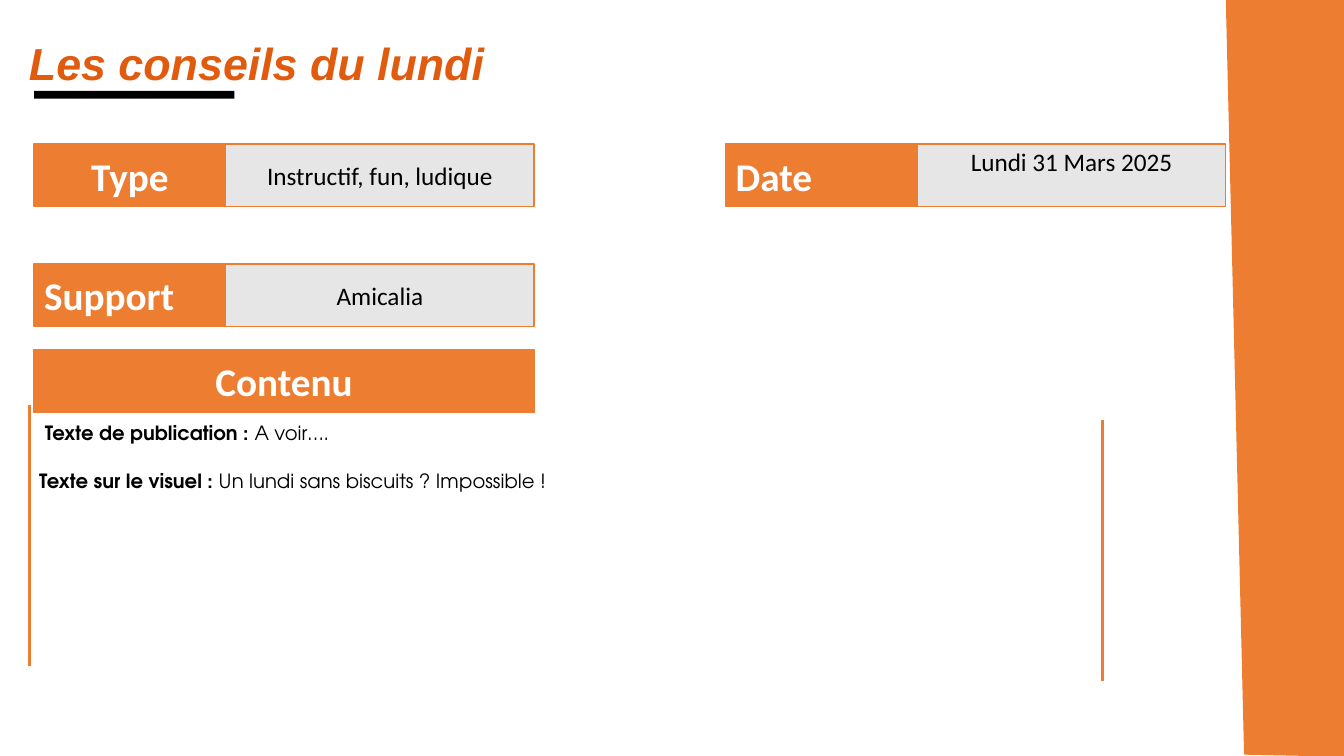
from dataclasses import dataclass

import pptx
import pptx.dml.color
import pptx.enum.shapes
import pptx.enum.text
import pptx.oxml
import pptx.oxml.ns
import pptx.util

Cm, Pt = pptx.util.Cm, pptx.util.Pt
ALIGN = pptx.enum.text.PP_ALIGN
ANCHOR = pptx.enum.text.MSO_ANCHOR


@dataclass(frozen=True)
class Theme:
    orange: str = "ED7D31"
    title_orange: str = "E15B0F"
    grey: str = "E7E6E6"
    black: str = "000000"
    white: str = "FFFFFF"
    card_font: str = "Calibri"
    title_font: str = "Arial"
    content_font: str = "TeX Gyre Adventor"
    title_size: int = 32
    label_size: int = 28
    value_size: int = 18
    content_size: int = 14


THEME = Theme()

# Card grid, in centimetres
LEFT, LABEL_WIDTH, VALUE_WIDTH, CARD_HEIGHT = 0.86, 4.83, 7.77, 1.58


def apply_format(target, values):
    for name, value in values.items():
        setattr(target, name, value)


def rgb(color):
    return pptx.dml.color.RGBColor.from_string(color)


def write(paragraph, text, color, **font):
    run = paragraph.add_run()
    run.text = text
    apply_format(run.font, font)
    run.font.color.rgb = rgb(color)


def paint(shape, fill, line=None):
    shape.shadow.inherit = False
    shape.fill.solid()
    shape.fill.fore_color.rgb = rgb(fill)
    if line:
        shape.line.color.rgb = rgb(line)
        shape.line.width = Pt(1)
    else:
        shape.line.fill.background()


def add_box(slide, left, top, width, height, fill, line=None):
    shape = slide.shapes.add_shape(
        pptx.enum.shapes.MSO_SHAPE.RECTANGLE,
        Cm(left), Cm(top), Cm(width), Cm(height))
    paint(shape, fill, line)
    return shape


def add_label(slide, left, top, text, align=ALIGN.LEFT, width=LABEL_WIDTH):
    shape = add_box(slide, left, top, width, CARD_HEIGHT, THEME.orange, THEME.orange)
    shape.text_frame.vertical_anchor = ANCHOR.MIDDLE
    paragraph = shape.text_frame.paragraphs[0]
    paragraph.alignment = align
    write(paragraph, text, THEME.white, name=THEME.card_font,
          size=Pt(THEME.label_size), bold=True)


def add_value(slide, left, top, text, **frame):
    shape = add_box(slide, left, top, VALUE_WIDTH, CARD_HEIGHT, THEME.grey, THEME.orange)
    apply_format(shape.text_frame, {"vertical_anchor": ANCHOR.MIDDLE, **frame})
    paragraph = shape.text_frame.paragraphs[0]
    paragraph.alignment = ALIGN.CENTER
    write(paragraph, text, THEME.black, name=THEME.card_font, size=Pt(THEME.value_size))


def add_vertical_rule(slide, left, top, height):
    rule = slide.shapes.add_connector(
        pptx.enum.shapes.MSO_CONNECTOR.STRAIGHT,
        Cm(left), Cm(top), Cm(left), Cm(top + height))
    rule.line.color.rgb = rgb(THEME.orange)
    rule.line.width = Pt(2.25)
    properties = rule._element.spPr
    properties.append(pptx.oxml.parse_xml(
        "<a:effectLst %s/>" % pptx.oxml.ns.nsdecls("a")))


def add_text_frame(slide, left, top, width, height, **frame):
    box = slide.shapes.add_textbox(Cm(left), Cm(top), Cm(width), Cm(height))
    apply_format(box.text_frame, {"word_wrap": True, **frame})
    return box.text_frame


def add_side_band(slide):
    corners = [(33.87, 0), (33.87, 19.05), (31.37, 19), (30.91, 0)]
    builder = slide.shapes.build_freeform(Cm(30.91), Cm(0))
    builder.add_line_segments([(Cm(x), Cm(y)) for x, y in corners], close=True)
    paint(builder.convert_to_shape(), THEME.orange, THEME.orange)


def add_title(slide):
    frame = add_text_frame(slide, 0.48, 0.64, 28, 1.32, margin_top=Cm(0.25))
    paragraph = frame.paragraphs[0]
    paragraph.alignment = ALIGN.JUSTIFY
    write(paragraph, "Les conseils du lundi", THEME.title_orange, name=THEME.title_font,
          size=Pt(THEME.title_size), bold=True, italic=True)
    add_box(slide, LEFT, 2.29, 5.05, 0.2, THEME.black)


def add_content(slide):
    frame = add_text_frame(slide, 0.74, 10.49, 27.28, 3.76)
    entries = [
        ("Texte de publication : ", "A voir….", 0.14),
        ("Texte sur le visuel : ", "Un lundi sans biscuits ? Impossible !", 0),
    ]
    font = {"name": THEME.content_font, "size": Pt(THEME.content_size)}
    for index, (heading, text, indent) in enumerate(entries):
        paragraph = frame.add_paragraph() if index else frame.paragraphs[0]
        paragraph.space_before = Pt(17 if index else 0)
        paragraph._p.get_or_add_pPr().set("marL", str(Cm(indent)))
        write(paragraph, heading, THEME.black, bold=True, **font)
        write(paragraph, text, THEME.black, bold=False, **font)


def main():
    presentation = pptx.Presentation()
    presentation.slide_width, presentation.slide_height = Cm(33.87), Cm(19.05)
    slide = presentation.slides.add_slide(presentation.slide_layouts[6])

    # Decor and title
    add_side_band(slide)
    add_title(slide)

    # Cards: label and value side by side
    date_left, first_row, second_row = 18.29, 3.63, 6.65
    add_label(slide, LEFT, first_row, "Type", ALIGN.CENTER)
    add_value(slide, LEFT + LABEL_WIDTH, first_row, "Instructif, fun, ludique")
    add_label(slide, date_left, first_row, "Date")
    add_value(slide, date_left + LABEL_WIDTH, first_row, "Lundi 31 Mars 2025",
              vertical_anchor=ANCHOR.TOP, margin_top=Cm(0.05))
    add_label(slide, LEFT, second_row, "Support")
    add_value(slide, LEFT + LABEL_WIDTH, second_row, "Amicalia")

    # Content between two vertical rules
    add_vertical_rule(slide, 0.74, 10.21, 6.58)
    add_label(slide, LEFT, 8.81, "Contenu", ALIGN.CENTER, LABEL_WIDTH + VALUE_WIDTH)
    add_vertical_rule(slide, 27.79, 10.59, 6.58)
    add_content(slide)

    presentation.save("out.pptx")


if __name__ == "__main__":
    main()
